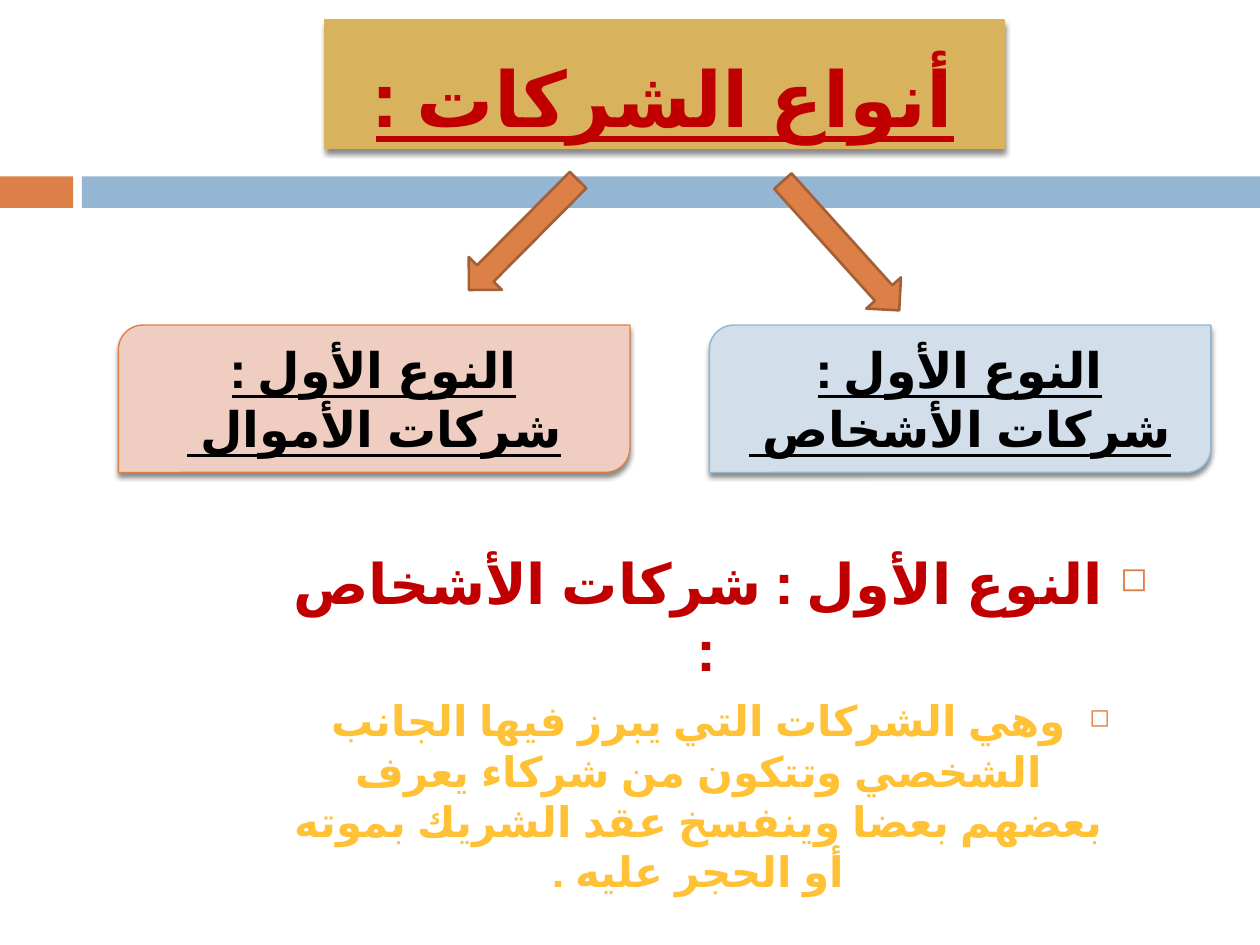
from dataclasses import dataclass

from lxml.etree import SubElement
from pptx import Presentation
from pptx.dml.color import RGBColor
from pptx.enum.lang import MSO_LANGUAGE_ID as Language
from pptx.enum.shapes import MSO_SHAPE as Shape
from pptx.enum.text import MSO_ANCHOR as Anchor, PP_ALIGN as Align
from pptx.oxml import parse_xml
from pptx.oxml.ns import nsdecls, qn
from pptx.util import Pt

EMU_PER_PX = 9144  # 100 px to the inch


@dataclass(frozen=True)
class Theme:
    font: str = "Calibri"
    orange: str = "DD8047"
    dark_orange: str = "A35F35"
    pale_orange: str = "EFCDC1"
    blue: str = "94B6D2"
    pale_blue: str = "D2DEEA"
    gold: str = "D8B25C"
    red: str = "C00000"
    black: str = "000000"
    gold_outline: str = "A9873B"
    gold_stops: tuple = ((0, "986A01"), (43, "FFC135"), (48, "FFBB20"), (100, "986A01"))
    title_size: int = 44
    heading_size: int = 32
    box_size: int = 28
    body_size: int = 24
    thin: float = 0.79
    thick: float = 1.5


THEME = Theme()


def px(*lengths):
    return [length * EMU_PER_PX for length in lengths]


def add_shape(slide, kind, box, fill, line=None, width=THEME.thin, rotation=0, shadow=False):
    shape = slide.shapes.add_shape(kind, *px(*box))
    shape.rotation = rotation
    shape.fill.solid()
    shape.fill.fore_color.rgb = RGBColor.from_string(fill)
    if line:
        shape.line.color.rgb = RGBColor.from_string(line)
        shape.line.width = Pt(width)
    else:
        shape.line.fill.background()
    shape.shadow.inherit = False
    if shadow:
        effects = shape._element.spPr.find(qn("a:effectLst"))
        effects.append(parse_xml(
            f'<a:outerShdw {nsdecls("a")} blurRad="{Pt(3)}" dist="{Pt(2.4)}" dir="5400000" '
            f'rotWithShape="0"><a:srgbClr val="{THEME.black}"><a:alpha val="45000"/>'
            '</a:srgbClr></a:outerShdw>'))
    return shape


def write_text(paragraph, text, size, color=None, underline=None):
    """Write one bold, centred, right-to-left Arabic run."""
    paragraph.alignment = Align.CENTER
    paragraph._p.get_or_add_pPr().set("rtl", "1")
    run = paragraph.add_run()
    run.text = text
    font = run.font
    font.size, font.bold, font.underline = Pt(size), True, underline
    font.language_id = Language.ARABIC
    if color:
        font.color.rgb = RGBColor.from_string(color)
    font.name = THEME.font
    return run


def paint_gold(run):
    """Give the run a gold gradient and a thin outline."""
    stops = "".join(f'<a:gs pos="{position * 1000}"><a:srgbClr val="{color}"/></a:gs>'
                    for position, color in THEME.gold_stops)
    properties = run.font._element
    properties.insert(0, parse_xml(
        f'<a:ln {nsdecls("a")} w="{Pt(0.71)}"><a:solidFill>'
        f'<a:srgbClr val="{THEME.gold_outline}"/></a:solidFill></a:ln>'))
    properties.insert(1, parse_xml(
        f'<a:gradFill {nsdecls("a")}><a:gsLst>{stops}</a:gsLst>'
        '<a:lin ang="5400000" scaled="0"/></a:gradFill>'))


def add_bullet(paragraph):
    paragraph.space_before = Pt(7)
    properties = paragraph._p.get_or_add_pPr()
    indent, = px(35)
    properties.set("marL", str(indent))
    properties.set("indent", str(-indent))
    color = SubElement(properties, qn("a:buClr"))
    SubElement(color, qn("a:srgbClr"), val=THEME.orange)
    SubElement(properties, qn("a:buSzPct"), val="60000")
    SubElement(properties, qn("a:buChar"), char="◻")


def add_label(slide, kind, box, text, size, color, fill, line, anchor=Anchor.MIDDLE):
    shape = add_shape(slide, kind, box, fill, line, shadow=True)
    frame = shape.text_frame
    frame.word_wrap = True
    frame.vertical_anchor = anchor
    write_text(frame.paragraphs[0], text, size, color, underline=True)


def add_band(slide, left, top, width, height):
    tab, gap = 58, 7
    add_shape(slide, Shape.RECTANGLE, (left, top, tab, height), THEME.orange)
    add_shape(slide, Shape.RECTANGLE,
              (left + tab + gap, top, width - tab - gap, height), THEME.blue)


def add_company_types(slide, left, top, width, height):
    """Place the two arrows and, at the foot of the area, the boxes they lead to."""
    arrows = (((555, 1, 37, 138), 318), ((303, 0, 37, 123), 44.8))
    for (x, y, *size), rotation in arrows:
        add_shape(slide, Shape.DOWN_ARROW, (left + x, top + y, *size), THEME.orange,
                  THEME.dark_orange, THEME.thick, rotation)
    box_height, right_width, left_width = 117, 398, 406
    box_top = top + height - box_height
    boxes = (
        (left + width - right_width, right_width, "النوع الأول : شركات الأشخاص ",
         THEME.pale_blue, THEME.blue),
        (left, left_width, "النوع الأول : شركات الأموال ", THEME.pale_orange, THEME.orange),
    )
    for x, box_width, text, fill, line in boxes:
        add_label(slide, Shape.ROUND_2_DIAG_RECTANGLE, (x, box_top, box_width, box_height),
                  text, THEME.box_size, THEME.black, fill, line)


def add_definition(slide, left, top, width, height):
    frame = slide.shapes.add_textbox(*px(left, top, width, height)).text_frame
    frame.word_wrap = True
    heading, body = frame.paragraphs[0], frame.add_paragraph()
    write_text(heading, "النوع الأول : شركات الأشخاص : ", THEME.heading_size, THEME.red)
    run = write_text(body, "وهي الشركات التي يبرز فيها الجانب الشخصي وتتكون من شركاء يعرف "
                           "بعضهم بعضا وينفسخ عقد الشريك بموته أو الحجر عليه .",
                     THEME.body_size)
    paint_gold(run)
    for paragraph in (heading, body):
        add_bullet(paragraph)


def main():
    presentation = Presentation()
    presentation.slide_width, presentation.slide_height = px(1000, 750)
    slide = presentation.slides.add_slide(presentation.slide_layouts[6])
    add_band(slide, 0, 140, 1000, 25)
    add_label(slide, Shape.RECTANGLE, (258, 16, 539, 102), "أنواع الشركات :",
              THEME.title_size, THEME.red, THEME.gold, THEME.gold, Anchor.BOTTOM)
    add_company_types(slide, 94, 125, 867, 250)
    add_definition(slide, 222, 430, 700, 218)
    presentation.save("out.pptx")


if __name__ == "__main__":
    main()
